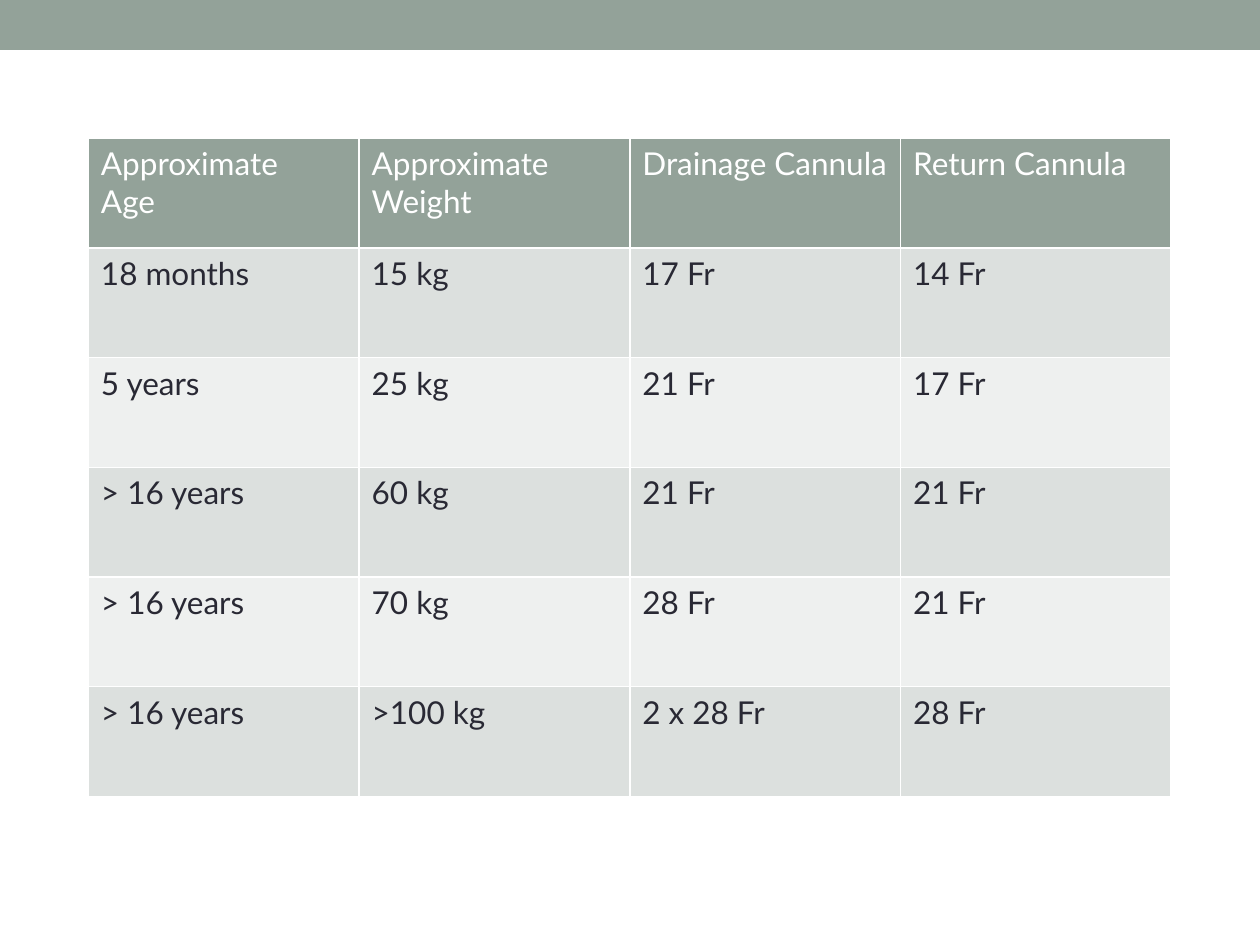
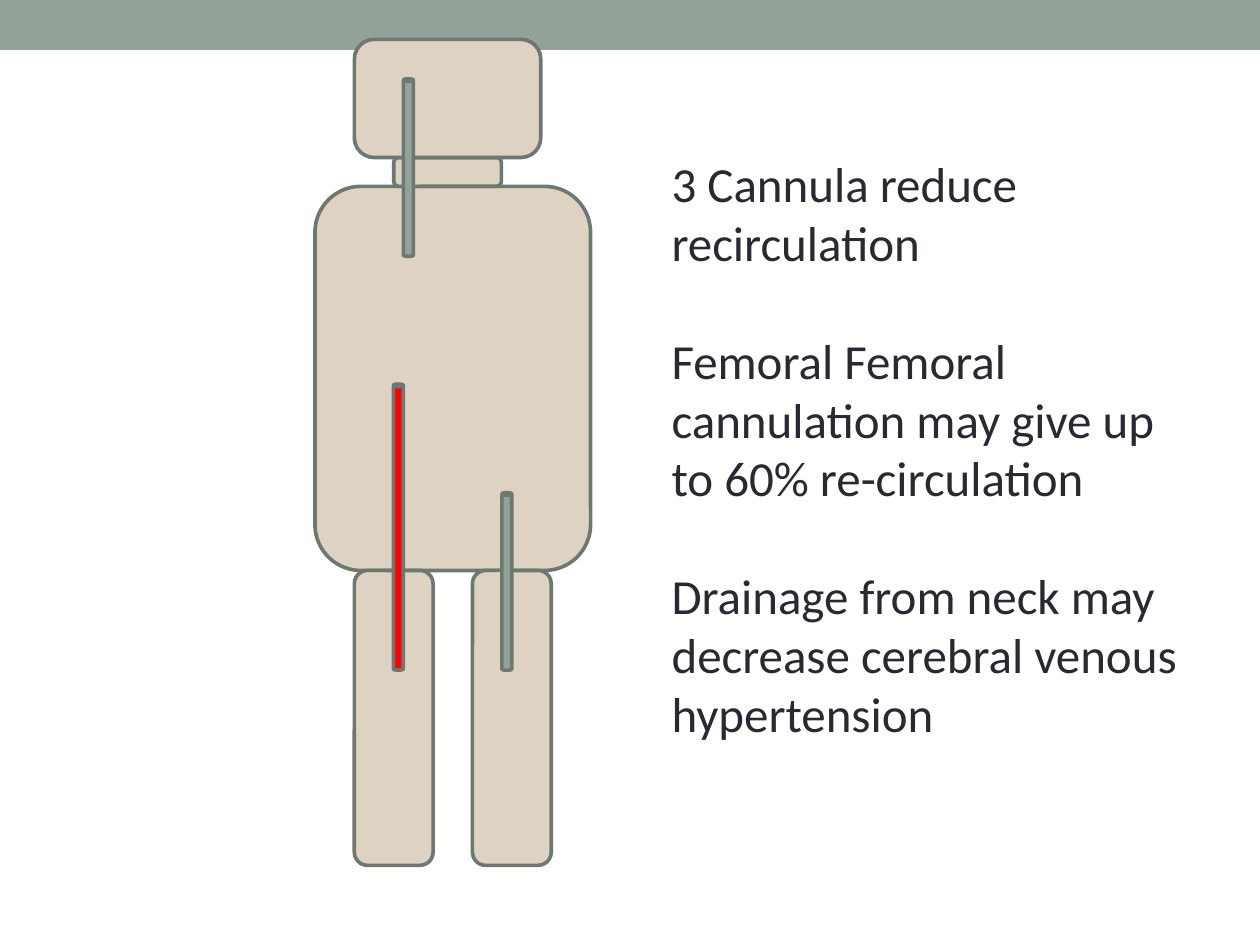
from pptx import Presentation
from pptx.dml.color import RGBColor
from pptx.enum.shapes import MSO_SHAPE
from pptx.oxml import parse_xml
from pptx.oxml.ns import nsdecls
from pptx.util import Pt

SAGE, EDGE, SKIN, RED = "93A299", "6D7871", "DED2C2", "FF0000"
INK, WHITE = "292934", "FFFFFF"
STRIPES = ["EEF0EF", "DCE0DE"]
WIDE, HIGH = 720, 540

SIZES = [
    ["Approximate\nAge", "Approximate Weight", "Drainage Cannula", "Return Cannula"],
    ["18 months", "15 kg", "17 Fr", "14 Fr"],
    ["5 years", "25 kg", "21 Fr", "17 Fr"],
    ["> 16 years", "60 kg", "21 Fr", "21 Fr"],
    ["> 16 years", "70 kg", "28 Fr", "21 Fr"],
    ["> 16 years", ">100 kg", "2 x 28 Fr", "28 Fr"],
]
GRID = (50.5, 79, 154.7, 62.7)

POINTS = [
    "3 Cannula reduce recirculation",
    "Femoral Femoral cannulation may give up to 60% re-circulation",
    "Drainage from neck may decrease cerebral venous hypertension",
]

BODY = {
    "torso": (180, 106.5, 157.5, 219.5),
    "neck": (225, 90, 61.5, 16.5),
    "head": (202.5, 22.5, 106.5, 67.5),
    "right leg": (202.5, 326, 45, 168.5),
    "left leg": (270, 326, 45, 168.5),
}
TUBES = [
    (230.5, 45, 101.5, SAGE),
    (224.75, 219.5, 163.5, RED),
    (286.75, 281.5, 101.5, SAGE),
]
BORE = 5.7


def tint(code):
    return RGBColor.from_string(code)


def paint(fill, code):
    fill.solid()
    fill.fore_color.rgb = tint(code)


def style(par, face, size, code):
    par.font.name = face
    par.font.size = Pt(size)
    par.font.bold = False
    par.font.color.rgb = tint(code)


def draw(slide, kind, box, code, edge=None):
    shape = slide.shapes.add_shape(kind, *map(Pt, box))
    shape.shadow.inherit = False
    paint(shape.fill, code)
    if edge:
        shape.line.color.rgb = tint(edge)
        shape.line.width = Pt(2.08)
    else:
        shape.line.fill.background()


def start(deck):
    slide = deck.slides.add_slide(deck.slide_layouts[6])
    draw(slide, MSO_SHAPE.RECTANGLE, (0, 0, WIDE, 28.5), SAGE)
    return slide


def rule(cell):
    props = cell._tc.get_or_add_tcPr()
    for side in "LRTB":
        props.append(parse_xml(
            f'<a:ln{side} {nsdecls("a")} w="{Pt(1)}"><a:solidFill>'
            f'<a:srgbClr val="{WHITE}"/></a:solidFill></a:ln{side}>'))


def show_sizes(deck):
    slide = start(deck)
    left, top, step, drop = GRID
    rows, cols = len(SIZES), len(SIZES[0])
    table = slide.shapes.add_table(
        rows, cols, Pt(left), Pt(top), Pt(cols * step), Pt(rows * drop)).table
    table.first_row = table.horz_banding = False
    for col in table.columns:
        col.width = Pt(step)
    for r, texts in enumerate(SIZES):
        table.rows[r].height = Pt(drop)
        for c, text in enumerate(texts):
            cell = table.cell(r, c)
            cell.text = text
            rule(cell)
            paint(cell.fill, STRIPES[r % 2] if r else SAGE)
            for par in cell.text_frame.paragraphs:
                style(par, "Lato", 18, INK if r else WHITE)


def show_body(deck):
    slide = start(deck)
    for box in BODY.values():
        draw(slide, MSO_SHAPE.ROUNDED_RECTANGLE, box, SKIN, EDGE)
    for left, top, length, code in TUBES:
        draw(slide, MSO_SHAPE.CAN, (left, top, BORE, length), code, EDGE)
    frame = slide.shapes.add_textbox(Pt(376.7), Pt(84.4), Pt(304), Pt(346)).text_frame
    frame.word_wrap = True
    frame.text = "\n".join(POINTS)
    for i, par in enumerate(frame.paragraphs):
        style(par, "Calibri", 28, INK)
        if i:
            par.space_before = Pt(33.6)


def main():
    deck = Presentation()
    deck.slide_width, deck.slide_height = Pt(WIDE), Pt(HIGH)
    show_sizes(deck)
    show_body(deck)
    deck.save("out.pptx")


if __name__ == "__main__":
    main()
